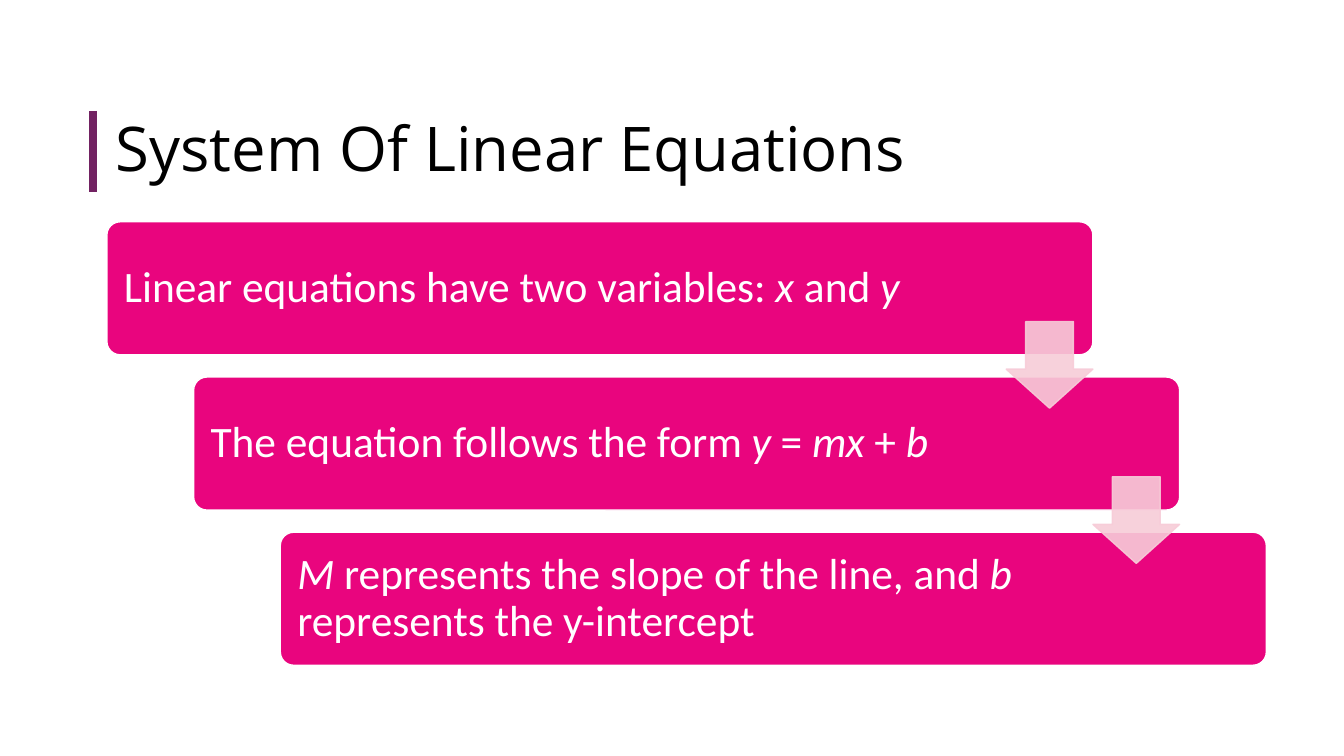
from lxml import etree
from pptx import Presentation
from pptx.dml.color import RGBColor
from pptx.enum.shapes import MSO_CONNECTOR, MSO_SHAPE
from pptx.enum.text import MSO_ANCHOR, PP_ALIGN
from pptx.oxml.ns import qn
from pptx.util import Inches, Pt

STRAIGHT = MSO_CONNECTOR.STRAIGHT
ROUNDED = MSO_SHAPE.ROUNDED_RECTANGLE
DOWN_ARROW = MSO_SHAPE.DOWN_ARROW
MIDDLE = MSO_ANCHOR.MIDDLE
LEFT = PP_ALIGN.LEFT

STEPS = [
    [("Linear equations have two variables: ", False), ("x", True),
     (" and ", False), ("y", True)],
    [("The equation follows the form ", False), ("y", True), (" = ", False),
     ("mx", True), (" + ", False), ("b", True)],
    [("M", True), (" represents the slope of the line, and ", False),
     ("b", True), (" represents the y-intercept", False)],
]
CARD_LEFT, CARD_TOP = 1.06, 2.2
CARD_WIDTH, CARD_HEIGHT = 9.78, 1.32
STEP_RIGHT, STEP_DOWN = 0.86, 1.54
ARROW_SIZE, ARROW_TOP = 0.86, 3.19


def color(value):
    return RGBColor.from_string(value)


class Deck:
    purple, pink, pale = "722262", "E9057E", "F7CCD8"
    white, black = "FFFFFF", "000000"
    title_font, body_font = "Open Sans", "Calibri"

    def __init__(self, slide):
        self.slide = slide

    def add_text(self, frame, runs, font, size, ink, insets):
        frame.word_wrap = True
        frame.vertical_anchor = MIDDLE
        frame.margin_left, frame.margin_top, frame.margin_right, frame.margin_bottom = map(
            Inches, insets)
        paragraph = frame.paragraphs[0]
        paragraph.alignment = LEFT
        paragraph.line_spacing = 0.9
        for text, italic in runs:
            run = paragraph.add_run()
            run.text = text
            run.font.name = font
            run.font.size = Pt(size)
            run.font.italic = italic
            run.font.color.rgb = color(ink)

    def title(self, text, left, top, width, height):
        heading = self.slide.shapes.add_textbox(
            Inches(left), Inches(top), Inches(width), Inches(height))
        self.add_text(heading.text_frame, [(text, False)], self.title_font, 44,
                      self.black, (0.1, 0.05, 0.1, 0.05))

    def accent(self, x, top, bottom):
        bar = self.slide.shapes.add_connector(
            STRAIGHT, Inches(x), Inches(top), Inches(x), Inches(bottom))
        bar.line.color.rgb = color(self.purple)
        bar.line.width = Pt(6)
        etree.SubElement(bar._element.spPr, qn("a:effectLst"))

    def block(self, kind, left, top, width, height, adjustments, fill, edge):
        block = self.slide.shapes.add_shape(
            kind, Inches(left), Inches(top), Inches(width), Inches(height))
        for index, amount in enumerate(adjustments):
            block.adjustments[index] = amount
        block.shadow.inherit = False
        block.fill.solid()
        block.fill.fore_color.rgb = color(fill)
        block.line.color.rgb = color(edge)
        block.line.width = Pt(1)
        return block

    def card(self, runs, left, top):
        card = self.block(ROUNDED, left, top, CARD_WIDTH, CARD_HEIGHT,
                          [0.1], self.pink, self.white)
        self.add_text(card.text_frame, runs, self.body_font, 31, self.white,
                      (0.13, 0.13, 1.5, 0.13))

    def arrow(self, left, top):
        arrow = self.block(DOWN_ARROW, left, top, ARROW_SIZE, ARROW_SIZE,
                           [0.55, 0.45], self.pale, self.pale)
        for tint in arrow._element.spPr.iter(qn("a:srgbClr")):
            etree.SubElement(tint, qn("a:alpha")).set("val", "90000")


def main():
    presentation = Presentation()
    presentation.slide_width = Inches(13.33)
    presentation.slide_height = Inches(7.5)
    deck = Deck(presentation.slides.add_slide(presentation.slide_layouts[6]))

    deck.accent(0.92, 1.1, 1.9)
    deck.title("System Of Linear Equations", 1.05, 1.1, 11.5, 0.8)
    for step, runs in enumerate(STEPS):
        deck.card(runs, CARD_LEFT + step * STEP_RIGHT, CARD_TOP + step * STEP_DOWN)
    for step in range(len(STEPS) - 1):
        deck.arrow(CARD_LEFT + CARD_WIDTH - ARROW_SIZE + step * STEP_RIGHT,
                   ARROW_TOP + step * STEP_DOWN)

    presentation.save("out.pptx")


if __name__ == "__main__":
    main()
